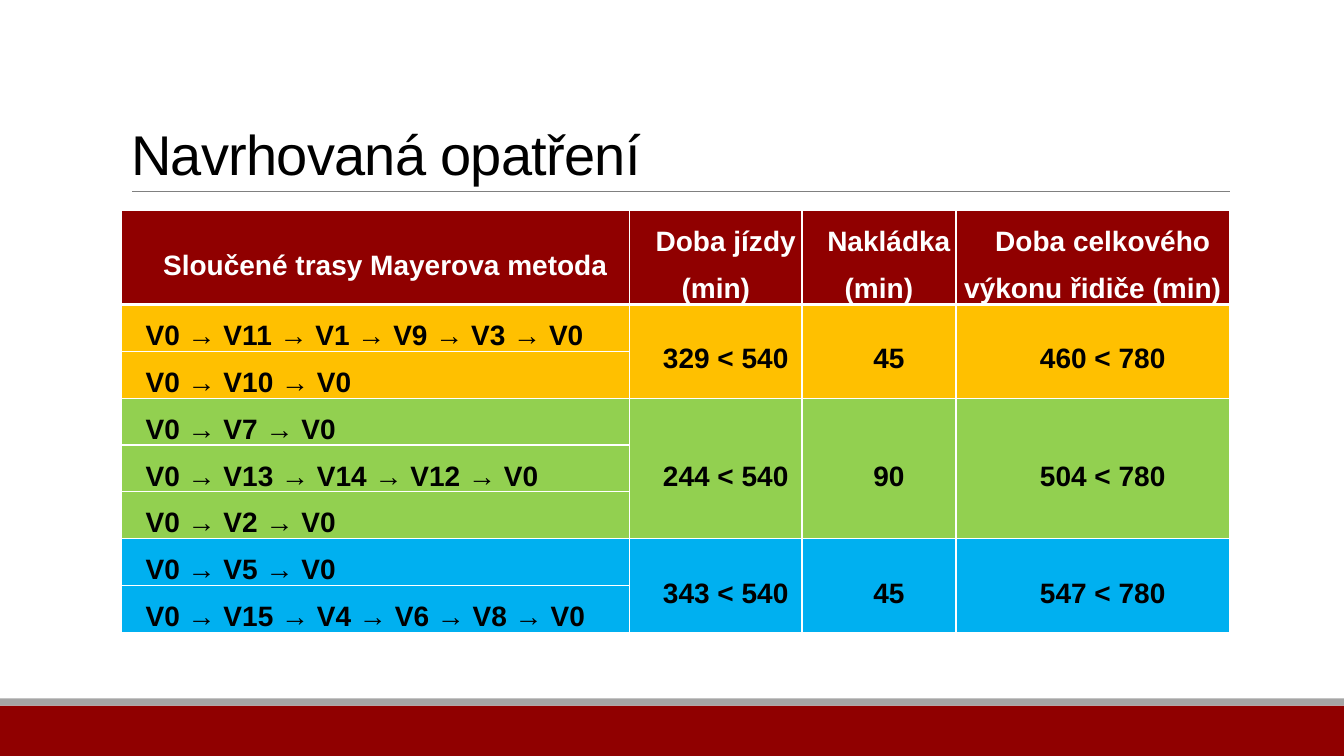
"""Build the slide with the proposed route measures table."""
import dataclasses

import pptx
import pptx.dml.color
import pptx.enum.shapes
import pptx.enum.text
import pptx.oxml.ns
import pptx.util
from lxml import etree

Cm = pptx.util.Cm
Pt = pptx.util.Pt
ALIGN = pptx.enum.text.PP_ALIGN
ANCHOR = pptx.enum.text.MSO_ANCHOR
qn = pptx.oxml.ns.qn

RED, WHITE, BLACK = "900000", "FFFFFF", "000000"
HEADERS = (
    "Sloučené trasy Mayerova metoda",
    "Doba jízdy (min)",
    "Nakládka (min)",
    "Doba celkového výkonu řidiče (min)",
)
COL_WIDTHS = (12.82, 4.34, 3.88, 6.9)
HEADER_HEIGHT, ROW_HEIGHT, TABLE_HEIGHT = 0.97, 0.51, 10.34
CELL_FORMAT = {
    "margin_left": Cm(0.12),
    "margin_right": Cm(0.12),
    "margin_top": 0,
    "margin_bottom": 0,
    "vertical_anchor": ANCHOR.MIDDLE,
}
TITLE_FORMAT = {
    "word_wrap": True,
    "auto_size": pptx.enum.text.MSO_AUTO_SIZE.NONE,
    "vertical_anchor": ANCHOR.BOTTOM,
}


@dataclasses.dataclass(frozen=True)
class RouteGroup:
    """Routes merged for one driver, with their shared times."""
    color: str
    routes: tuple[str, ...]
    times: tuple[str, str, str]


@dataclasses.dataclass(frozen=True)
class Bar:
    """Full-width footer bar, in centimetres."""
    color: str
    top: float
    height: float


GROUPS = (
    RouteGroup("FFC000", ("V0 → V11 → V1 → V9 → V3 → V0", "V0 → V10 → V0"),
               ("329 < 540", "45", "460 < 780")),
    RouteGroup("92D050", ("V0 → V7 → V0", "V0 → V13 → V14 → V12 → V0", "V0 → V2 → V0"),
               ("244 < 540", "90", "504 < 780")),
    RouteGroup("00B0F0", ("V0 → V5 → V0", "V0 → V15 → V4 → V6 → V8 → V0"),
               ("343 < 540", "45", "547 < 780")),
)
BARS = (Bar(RED, 17.78, 1.27), Bar("A5A5A5", 17.6, 0.18))


def rgb(color: str) -> pptx.dml.color.RGBColor:
    """Turn a hex string into a colour."""
    return pptx.dml.color.RGBColor.from_string(color)


def apply_format(target: object, values: dict) -> None:
    """Set each named attribute on the target."""
    for name, value in values.items():
        setattr(target, name, value)


def write_text(p, text: str, size: float, color: str, bold: bool):
    """Add one formatted Arial run to a paragraph."""
    r = p.add_run()
    r.text = text
    apply_format(r.font, {"name": "Arial", "size": Pt(size), "bold": bold})
    r.font.color.rgb = rgb(color)
    return r


def set_borders(cell, widths: dict[str, float]) -> None:
    """Give a cell white borders ahead of its fill."""
    tc_pr = cell._tc.get_or_add_tcPr()
    for i, (side, width) in enumerate(widths.items()):
        ln = etree.Element(qn(f"a:ln{side}"), w=str(Pt(width)))
        fill = etree.SubElement(ln, qn("a:solidFill"))
        etree.SubElement(fill, qn("a:srgbClr"), val=WHITE)
        tc_pr.insert(i, ln)


def style_cell(cell, fill: str, top: float = 1, bottom: float = 1) -> None:
    """Set margins, fill and borders of a cell."""
    apply_format(cell, CELL_FORMAT)
    cell.fill.solid()
    cell.fill.fore_color.rgb = rgb(fill)
    set_borders(cell, {"L": 1, "R": 1, "T": top, "B": bottom})


def fill_cell(cell, text: str, color: str, align: ALIGN) -> None:
    """Write the indented bold text of a cell."""
    p = cell.text_frame.paragraphs[0]
    apply_format(p, {"alignment": align, "line_spacing": 1.5})
    p._p.get_or_add_pPr().set("indent", str(Cm(0.5)))
    write_text(p, text, 20, color, True)


def add_title(s, text: str) -> None:
    """Place and format the title placeholder."""
    sp = s.shapes.title
    apply_format(sp, {"left": Cm(3.05), "top": Cm(0.79), "width": Cm(27.94), "height": Cm(4.04)})
    tf = sp.text_frame
    apply_format(tf, TITLE_FORMAT)
    p = tf.paragraphs[0]
    apply_format(p, {"alignment": ALIGN.LEFT, "line_spacing": 0.85})
    r = write_text(p, text, 40, BLACK, False)
    r.font._element.set("spc", "-50")


def add_bar(s, bar: Bar, width: int) -> None:
    """Draw a footer bar."""
    sp = s.shapes.add_shape(pptx.enum.shapes.MSO_SHAPE.RECTANGLE,
                            0, Cm(bar.top), width, Cm(bar.height))
    sp.shadow.inherit = False
    sp.fill.solid()
    sp.fill.fore_color.rgb = rgb(bar.color)
    sp.line.fill.background()


def add_rule(s) -> None:
    """Draw the thin line under the title."""
    cxn = s.shapes.add_connector(pptx.enum.shapes.MSO_CONNECTOR.STRAIGHT,
                                 Cm(3.33), Cm(4.83), Cm(31), Cm(4.83))
    cxn.line.color.rgb = rgb("808080")
    cxn.line.width = Pt(0.5)
    etree.SubElement(cxn._element.spPr, qn("a:effectLst"))


def add_route_table(s) -> None:
    """Draw the table of route groups with merged time cells."""
    n_rows = 1 + sum(len(group.routes) for group in GROUPS)
    frame = s.shapes.add_table(n_rows, len(HEADERS), Cm(3.05), Cm(5.31),
                               Cm(sum(COL_WIDTHS)), Cm(TABLE_HEIGHT))
    table = frame.table
    for column, width in zip(table.columns, COL_WIDTHS):
        column.width = Cm(width)
    for i, row in enumerate(table.rows):
        row.height = Cm(ROW_HEIGHT if i else HEADER_HEIGHT)
    frame.height = Cm(TABLE_HEIGHT)
    for col, text in enumerate(HEADERS):
        style_cell(table.cell(0, col), RED, bottom=3)
        fill_cell(table.cell(0, col), text, WHITE, ALIGN.CENTER)
    first = 1
    for group in GROUPS:
        last = first + len(group.routes) - 1
        for row, route in enumerate(group.routes, first):
            for col in range(len(HEADERS)):
                style_cell(table.cell(row, col), group.color, top=3 if row == 1 else 1)
            fill_cell(table.cell(row, 0), route, BLACK, ALIGN.LEFT)
        for col, time in enumerate(group.times, 1):
            table.cell(first, col).merge(table.cell(last, col))
            fill_cell(table.cell(first, col), time, BLACK, ALIGN.CENTER)
        first = last + 1


def main() -> None:
    """Build and save the presentation."""
    prs = pptx.Presentation()
    apply_format(prs, {"slide_width": Cm(33.87), "slide_height": Cm(19.05)})
    s = prs.slides.add_slide(prs.slide_layouts.get_by_name("Title Only"))
    for bar in BARS:
        add_bar(s, bar, prs.slide_width)
    add_rule(s)
    add_title(s, "Navrhovaná opatření")
    add_route_table(s)
    prs.save("out.pptx")


if __name__ == "__main__":
    main()
